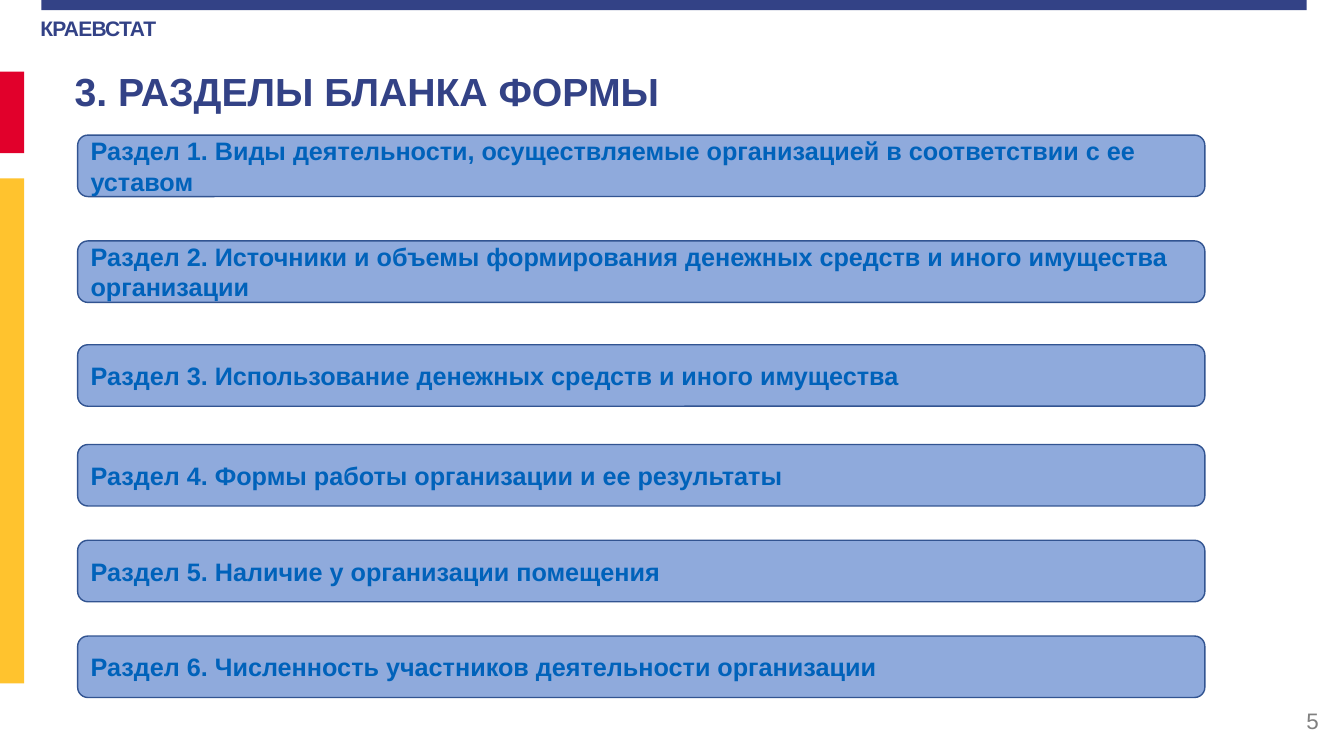
from pptx import Presentation
from pptx.dml.color import RGBColor
from pptx.enum.shapes import MSO_SHAPE
from pptx.enum.text import MSO_ANCHOR, MSO_AUTO_SIZE, PP_ALIGN
from pptx.util import Emu, Pt

RECTANGLE = MSO_SHAPE.RECTANGLE
ROUNDED = MSO_SHAPE.ROUNDED_RECTANGLE
TOP, MIDDLE = MSO_ANCHOR.TOP, MSO_ANCHOR.MIDDLE
LEFT, RIGHT = PP_ALIGN.LEFT, PP_ALIGN.RIGHT
NO_FIT = MSO_AUTO_SIZE.NONE

EMU_PER_PX = 9144
NAVY, RED, YELLOW = "334286", "E1002B", "FFC32E"
BAR_FILL, BAR_LINE, BAR_TEXT, GREY = "8FAADC", "325491", "0062BA", "808080"

SECTIONS = [
    (134, "Виды деятельности, осуществляемые организацией в соответствии с ее уставом"),
    (239, "Источники и объемы формирования денежных средств и иного имущества организации"),
    (342, "Использование денежных средств и иного имущества"),
    (441, "Формы работы организации и ее результаты"),
    (536, "Наличие у организации помещения"),
    (631, "Численность участников деятельности организации"),
]


def px(length):
    return Emu(length * EMU_PER_PX)


def color(value):
    return RGBColor.from_string(value)


class SlideBuilder:
    font_name = "Arial"

    def __init__(self, deck):
        self.page = deck.slides.add_slide(deck.slide_layouts[5])

    def fill_text(self, box, text, size, ink, bold=True, align=LEFT, anchor=MIDDLE, **frame_format):
        frame = box.text_frame
        frame_values = {"word_wrap": True, "auto_size": NO_FIT, "vertical_anchor": anchor}
        for name, value in (frame_values | frame_format).items():
            setattr(frame, name, value)
        para = frame.paragraphs[0]
        para.alignment = align
        span = para.add_run()
        span.text = text
        for name, value in {"name": self.font_name, "size": Pt(size), "bold": bold}.items():
            setattr(span.font, name, value)
        span.font.color.rgb = color(ink)
        return span

    def title(self, area, text, size, ink):
        box = self.page.shapes.title
        for name, value in zip(("left", "top", "width", "height"), area):
            setattr(box, name, px(value))
        self.fill_text(box, text, size, ink)

    def label(self, area, text, size, ink, **text_format):
        box = self.page.shapes.add_textbox(*map(px, area))
        return self.fill_text(box, text, size, ink, **text_format)

    def block(self, area, fill, line=None, kind=RECTANGLE):
        box = self.page.shapes.add_shape(kind, *map(px, area))
        box.shadow.inherit = False
        box.fill.solid()
        box.fill.fore_color.rgb = color(fill)
        if line:
            box.line.color.rgb = color(line)
            box.line.width = Pt(1)
        else:
            box.line.fill.background()
        return box

    def section(self, top, text):
        box = self.block((77, top, 1118, 61), BAR_FILL, BAR_LINE, ROUNDED)
        self.fill_text(box, text, 18, BAR_TEXT)


def main():
    deck = Presentation()
    deck.slide_width, deck.slide_height = px(1333), px(750)
    slide = SlideBuilder(deck)

    agency = slide.label((40, 13, 147, 27), "КРАЕВСТАТ", 15, NAVY, anchor=TOP,
                         margin_left=0, margin_top=px(2), margin_right=0, margin_bottom=0)
    agency.font._element.set("spc", "-50")
    slide.block((41, 0, 1255, 10), NAVY)
    slide.block((0, 71, 24, 81), RED)
    slide.block((0, 177, 24, 501), YELLOW)
    slide.label((1018, 695, 300, 40), "5", 16, GREY, bold=False, align=RIGHT)
    slide.title((64, 59, 1160, 62), "3. РАЗДЕЛЫ БЛАНКА ФОРМЫ", 28, NAVY)
    for number, (top, name) in enumerate(SECTIONS, 1):
        slide.section(top, f"Раздел {number}. {name}")

    deck.save("out.pptx")


if __name__ == "__main__":
    main()
